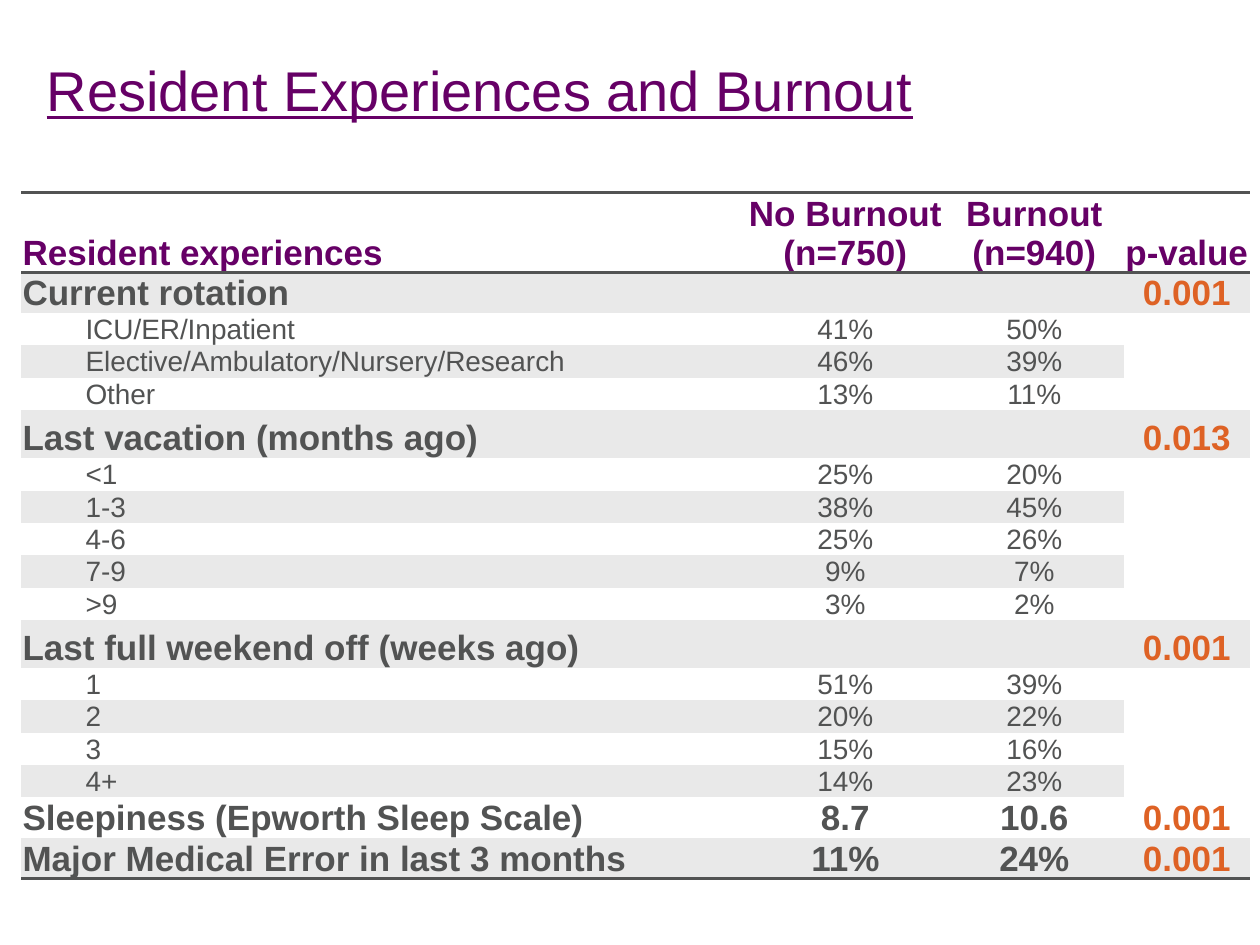
from lxml import etree
from pptx import Presentation
from pptx.dml.color import RGBColor
from pptx.enum.text import MSO_ANCHOR, PP_ALIGN
from pptx.oxml.ns import qn
from pptx.util import Pt

LEFT, CENTER = PP_ALIGN.LEFT, PP_ALIGN.CENTER
TOP, BOTTOM = MSO_ANCHOR.TOP, MSO_ANCHOR.BOTTOM
PURPLE, GRAY, ORANGE = "660066", "525353", "DE6225"
BANDS = ["FFFFFF", "E9E9E9"]
PLAIN_STYLE = "{2D5ABB26-0587-4C30-8999-92F81FD0307C}"

TITLE = "Resident Experiences and Burnout"
HEADER = ("Resident experiences", "No Burnout (n=750)", "Burnout (n=940)", "p-value")
GROUPS = [
    (("Current rotation", "", "", "0.001"), 22.9, [
        ("ICU/ER/Inpatient", "41%", "50%"),
        ("Elective/Ambulatory/Nursery/Research", "46%", "39%"),
        ("Other", "13%", "11%"),
    ]),
    (("Last vacation (months ago)", "", "", "0.013"), 27.5, [
        ("<1", "25%", "20%"),
        ("1-3", "38%", "45%"),
        ("4-6", "25%", "26%"),
        ("7-9", "9%", "7%"),
        (">9", "3%", "2%"),
    ]),
    (("Last full weekend off (weeks ago)", "", "", "0.001"), 27.5, [
        ("1", "51%", "39%"),
        ("2", "20%", "22%"),
        ("3", "15%", "16%"),
        ("4+", "14%", "23%"),
    ]),
    (("Sleepiness (Epworth Sleep Scale)", "8.7", "10.6", "0.001"), 23.3, []),
    (("Major Medical Error in last 3 months", "11%", "24%", "0.001"), 23.3, []),
]
COLUMN_WIDTHS = [414, 113.76, 102.24, 72]
HEADER_HEIGHT, ANSWER_HEIGHT = 45.7, 18.5


def rgb(value):
    return RGBColor.from_string(value)


def write(frame, text, size=20, color=GRAY, bold=True, underline=False,
          align=LEFT, indent=0):
    paragraph = frame.paragraphs[0]
    paragraph.alignment = align
    if indent:
        paragraph.level = 1
        properties = paragraph._p.get_or_add_pPr()
        properties.set("marL", str(Pt(indent)))
        properties.set("indent", "0")
    run = paragraph.add_run()
    run.text = text
    run.font.name = "Arial"
    run.font.size = Pt(size)
    run.font.bold = bold
    run.font.underline = underline
    run.font.color.rgb = rgb(color)


def rule(cell, side):
    line = etree.Element(qn(f"a:ln{side}"), w=str(Pt(2)))
    fill = etree.SubElement(line, qn("a:solidFill"))
    etree.SubElement(fill, qn("a:srgbClr"), val=GRAY)
    cell._tc.get_or_add_tcPr().insert(0, line)


def fill_row(row, texts, band, label_color=GRAY, p_color=ORANGE, answer=False):
    for column, cell in enumerate(row.cells):
        cell.fill.solid()
        cell.fill.fore_color.rgb = rgb(band)
        cell.vertical_anchor = BOTTOM
        cell.margin_left = cell.margin_right = cell.margin_top = Pt(0.7)
        cell.margin_bottom = 0
        text = texts[column] if column < len(texts) else ""
        if text:
            write(cell.text_frame, text, size=16 if answer else 20, bold=not answer,
                  color=p_color if column == 3 else label_color,
                  align=CENTER if column else LEFT,
                  indent=36 if answer and column == 0 else 0)


def main():
    deck = Presentation()
    deck.slide_width, deck.slide_height = Pt(720), Pt(540)
    slide = deck.slides.add_slide(deck.slide_layouts[5])

    title = slide.shapes.title
    title.left, title.top, title.width, title.height = Pt(22.3), Pt(24.5), Pt(666), Pt(68.4)
    title.text_frame.vertical_anchor = TOP
    title.text_frame.margin_left, title.text_frame.margin_top = Pt(4.3), Pt(7)
    write(title.text_frame, TITLE, size=32, color=PURPLE, bold=False, underline=True)

    heights = [HEADER_HEIGHT]
    for _, height, answers in GROUPS:
        heights += [height] + [ANSWER_HEIGHT] * len(answers)
    table_frame = slide.shapes.add_table(len(heights), len(HEADER), Pt(12.2), Pt(110.2),
                                         Pt(sum(COLUMN_WIDTHS)), Pt(sum(heights)))
    table = table_frame.table
    table.first_row = table.horz_banding = False
    table._tbl.tblPr.find(qn("a:tableStyleId")).text = PLAIN_STYLE
    for column, width in zip(table.columns, COLUMN_WIDTHS):
        column.width = Pt(width)
    for row, height in zip(table.rows, heights):
        row.height = Pt(height)

    fill_row(table.rows[0], HEADER, BANDS[0], label_color=PURPLE, p_color=PURPLE)
    index = 1
    for heading, _, answers in GROUPS:
        fill_row(table.rows[index], heading, BANDS[index % 2])
        first = index + 1
        for index, answer in enumerate(answers, first):
            fill_row(table.rows[index], answer, BANDS[index % 2], answer=True)
        if answers:
            table.cell(first, 3).merge(table.cell(index, 3))
        index += 1

    for column in range(len(HEADER)):
        rule(table.cell(0, column), "B")
        rule(table.cell(0, column), "T")
        rule(table.cell(len(heights) - 1, column), "B")

    deck.save("out.pptx")


if __name__ == "__main__":
    main()
